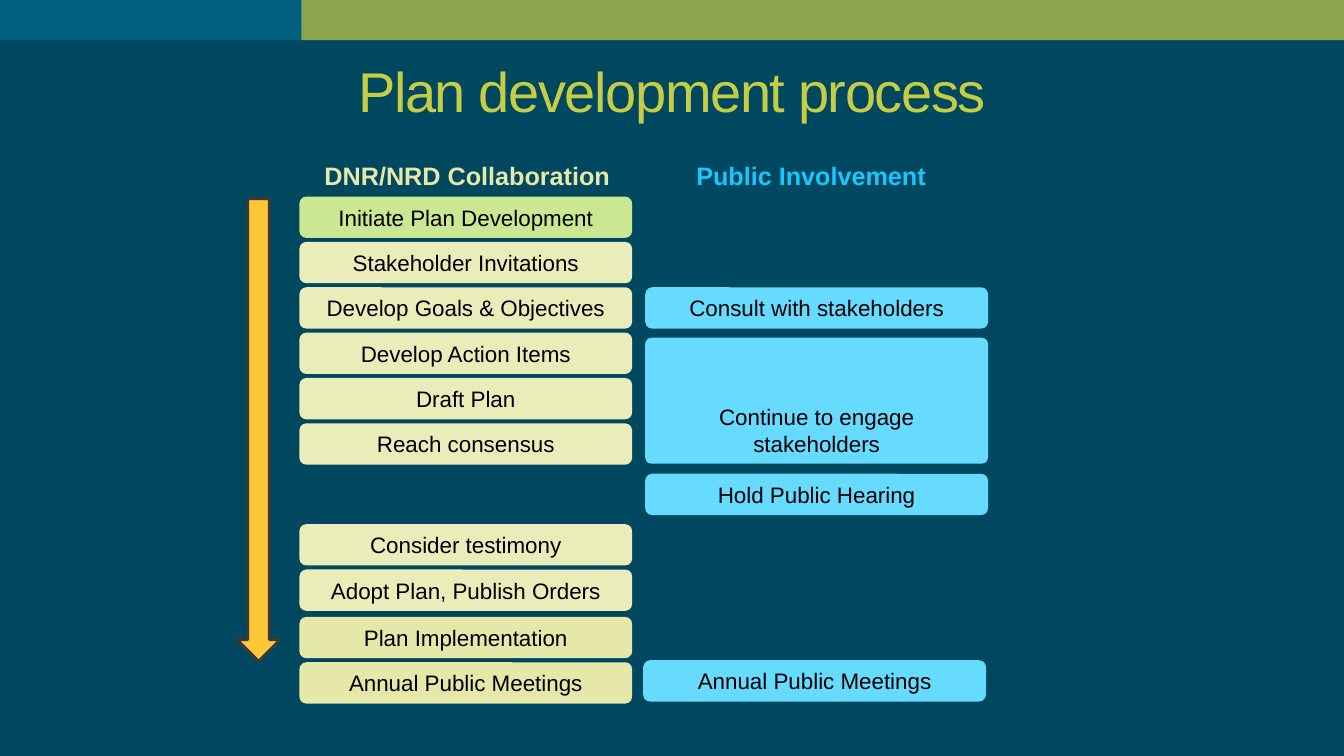
from dataclasses import dataclass

from lxml import etree
from pptx import Presentation
from pptx.dml.color import RGBColor
from pptx.enum import shapes, text
from pptx.oxml import ns
from pptx.util import Inches, Pt

COLORS = {
    "background": "00485F", "band": "00607F", "lime": "C6CD44",
    "start": "C9E891", "step": "EAECBA", "ongoing": "E6E8AA",
    "public": "66DAFF", "public_heading": "19C7FF",
    "arrow": "FFC738", "arrow_edge": "39393A", "ink": "000000",
}
STEP_LEFT, STEP_WIDTH = 2.97, 3.3
PUBLIC_LEFT, PUBLIC_WIDTH = 6.4, 3.4
BOX_HEIGHT, STEP_PITCH = 0.41, 0.45


@dataclass
class Label:
    wording: str
    left: float
    top: float
    width: float
    height: float
    color: str = "ink"
    size: float = 16
    bold: bool = False
    anchor: text.MSO_ANCHOR = text.MSO_ANCHOR.MIDDLE


@dataclass
class Box:
    label: Label
    fill: str
    roundness: float = 0.167


@dataclass
class Phase:
    top: float
    fill: str
    steps: tuple[str, ...]


PHASES = (
    Phase(1.95, "start", ("Initiate Plan Development",)),
    Phase(2.4, "step", ("Stakeholder Invitations", "Develop Goals & Objectives",
                        "Develop Action Items", "Draft Plan", "Reach consensus")),
    Phase(5.2, "step", ("Consider testimony", "Adopt Plan, Publish Orders")),
    Phase(6.12, "ongoing", ("Plan Implementation", "Annual Public Meetings")),
)
PUBLIC_BOXES = (
    Box(Label("Consult with stakeholders", PUBLIC_LEFT, 2.85, PUBLIC_WIDTH, BOX_HEIGHT), "public"),
    Box(Label("Continue to engage stakeholders", PUBLIC_LEFT, 3.35, PUBLIC_WIDTH, 1.25,
              anchor=text.MSO_ANCHOR.BOTTOM), "public", 0.049),
    Box(Label("Hold Public Hearing", PUBLIC_LEFT, 4.7, PUBLIC_WIDTH, BOX_HEIGHT), "public"),
    Box(Label("Annual Public Meetings", 6.38, 6.55, PUBLIC_WIDTH, BOX_HEIGHT), "public"),
)
TITLE = Label("Plan development process", 0, 0.17, 13.33, 1.44, "lime", 40)
HEADINGS = (
    Label("DNR/NRD Collaboration", STEP_LEFT, 1.54, 3.33, 0.4, "ongoing", 18, True),
    Label("Public Involvement", 6.38, 1.54, 3.33, 0.4, "public_heading", 18, True),
)


def rgb(name: str) -> RGBColor:
    return RGBColor.from_string(COLORS[name])


def write(shape, label: Label):
    frame = shape.text_frame
    frame.word_wrap = True
    frame.vertical_anchor = label.anchor
    paragraph = frame.paragraphs[0]
    paragraph.text = label.wording
    paragraph.alignment = text.PP_ALIGN.CENTER
    font = paragraph.font
    font.name, font.size, font.bold = "Arial", Pt(label.size), label.bold
    font.color.rgb = rgb(label.color)
    return paragraph


def add_label(slide, label: Label):
    area = slide.shapes.add_textbox(Inches(label.left), Inches(label.top),
                                    Inches(label.width), Inches(label.height))
    return write(area, label)


def add_filled(slide, preset: shapes.MSO_SHAPE, left: float, top: float,
               width: float, height: float, fill: str):
    shape = slide.shapes.add_shape(preset, Inches(left), Inches(top),
                                   Inches(width), Inches(height))
    shape.shadow.inherit = False
    shape.fill.solid()
    shape.fill.fore_color.rgb = rgb(fill)
    shape.line.fill.background()
    return shape


def add_box(slide, box: Box) -> None:
    label = box.label
    shape = add_filled(slide, shapes.MSO_SHAPE.ROUNDED_RECTANGLE, label.left, label.top,
                       label.width, label.height, box.fill)
    shape.adjustments[0] = box.roundness
    write(shape, label)


def main() -> None:
    deck = Presentation()
    deck.slide_width, deck.slide_height = Inches(13.33), Inches(7.5)
    slide = deck.slides.add_slide(deck.slide_layouts[6])
    slide.background.fill.solid()
    slide.background.fill.fore_color.rgb = rgb("background")

    add_filled(slide, shapes.MSO_SHAPE.RECTANGLE, 0, 0, 2.99, 0.4, "band")
    lime_band = add_filled(slide, shapes.MSO_SHAPE.RECTANGLE, 2.99, 0, 10.34, 0.4, "lime")
    lime = lime_band.fill._xPr.find(".//" + ns.qn("a:srgbClr"))
    etree.SubElement(lime, ns.qn("a:alpha"), val="70000")

    title = add_label(slide, TITLE)
    title.runs[0].font._element.set("spc", "-100")
    for heading in HEADINGS:
        add_label(slide, heading)

    for phase in PHASES:
        for row, step in enumerate(phase.steps):
            top = phase.top + row * STEP_PITCH
            add_box(slide, Box(Label(step, STEP_LEFT, top, STEP_WIDTH, BOX_HEIGHT), phase.fill))
    for public_box in PUBLIC_BOXES:
        add_box(slide, public_box)

    timeline = add_filled(slide, shapes.MSO_SHAPE.DOWN_ARROW, 2.35, 1.97, 0.43, 4.59, "arrow")
    timeline.line.color.rgb = rgb("arrow_edge")
    timeline.line.width = Pt(2.08)

    deck.save("out.pptx")


if __name__ == "__main__":
    main()
